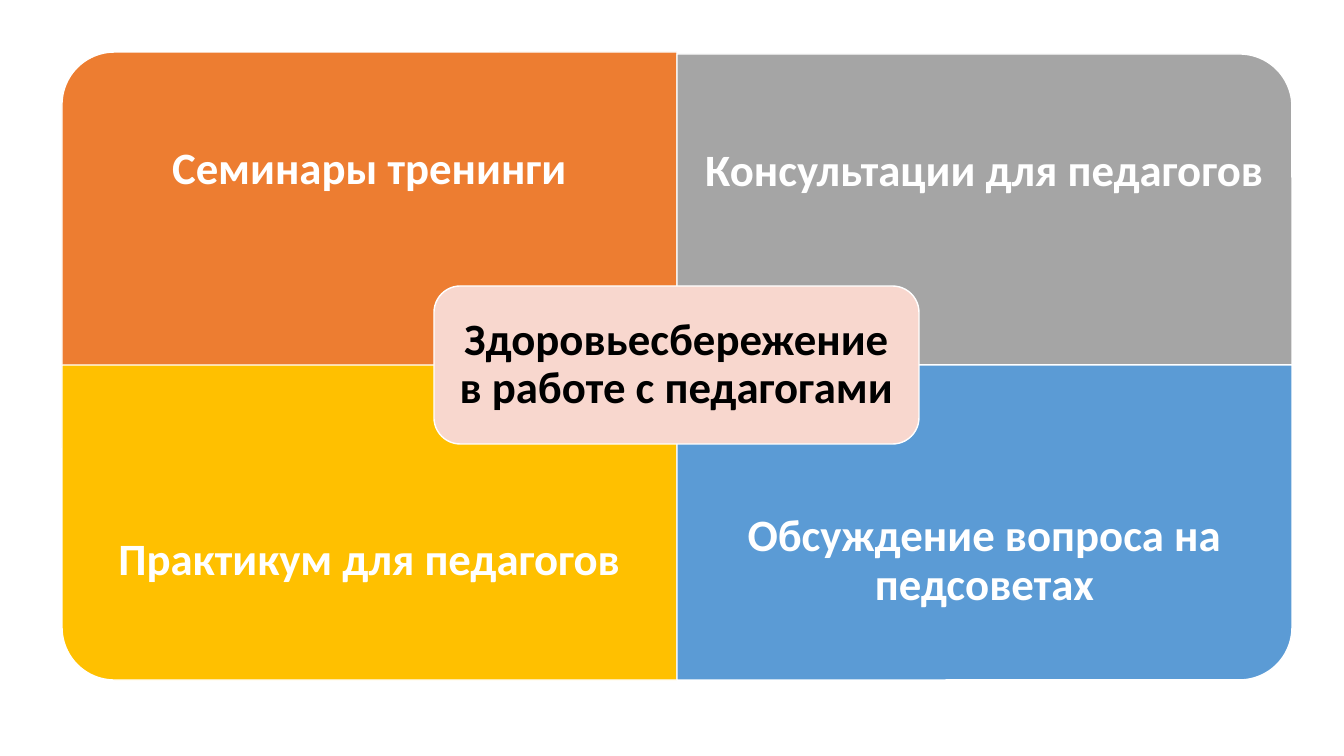
"""Build a slide with four coloured quadrants around a central topic."""
import pptx
import pptx.util
from pptx.dml.color import RGBColor
from pptx.enum.shapes import MSO_SHAPE
from pptx.enum.text import MSO_ANCHOR, PP_ALIGN

COLORS = {
    "orange": "ED7D31",
    "gray": "A5A5A5",
    "gold": "FFC000",
    "blue": "5B9BD5",
    "pink": "F8D7CE",
    "white": "FFFFFF",
    "black": "000000",
}
# text, fill, column, row, top, rotation
QUADRANTS = [
    ("Семинары тренинги", "orange", 0, 0, 52, 270),
    ("Консультации для педагогов", "gray", 1, 0, 54, 0),
    ("Практикум для педагогов", "gold", 0, 1, 365, 180),
    ("Обсуждение вопроса на педсоветах", "blue", 1, 1, 365, 90),
]
TOPIC = "Здоровьесбережение в работе с педагогами"
TOPIC_BOX = (434, 286, 485, 158)
LEFT, WIDTH, HEIGHT, TEXT_HEIGHT = 62, 615, 315, 237
EMU_PER_PX = 914400 / 100.8


def px(value):
    return pptx.util.Emu(round(value * EMU_PER_PX))


def add_panel(slide, preset, box, fill, rotation=0):
    left, top, width, height = box
    if rotation % 180:
        left, top = left + (width - height) / 2, top + (height - width) / 2
        width, height = height, width
    shape = slide.shapes.add_shape(preset, px(left), px(top), px(width), px(height))
    shape.rotation = rotation
    shape.shadow.inherit = False
    shape.fill.solid()
    shape.fill.fore_color.rgb = RGBColor.from_string(COLORS[fill])
    shape.line.color.rgb = RGBColor.from_string(COLORS["white"])
    shape.line.width = pptx.util.Pt(1)
    return shape


def write_text(shape, text, color, margin):
    frame = shape.text_frame
    frame.word_wrap = True
    frame.vertical_anchor = MSO_ANCHOR.MIDDLE
    frame.margin_left = frame.margin_right = px(margin)
    frame.margin_top = frame.margin_bottom = px(margin)
    paragraph = frame.paragraphs[0]
    paragraph.text = text
    paragraph.alignment = PP_ALIGN.CENTER
    paragraph.line_spacing = 0.9
    paragraph.font.name = "Calibri"
    paragraph.font.size = pptx.util.Pt(32)
    paragraph.font.bold = True
    paragraph.font.color.rgb = RGBColor.from_string(COLORS[color])


def main():
    presentation = pptx.Presentation()
    presentation.slide_width = px(1344)
    presentation.slide_height = px(756)
    slide = presentation.slides.add_slide(presentation.slide_layouts[6])

    for text, fill, column, row, top, rotation in QUADRANTS:
        left = LEFT + column * WIDTH
        add_panel(slide, MSO_SHAPE.ROUND_1_RECTANGLE, (left, top, WIDTH, HEIGHT), fill, rotation)
        text_top = top + row * (HEIGHT - TEXT_HEIGHT)
        label = slide.shapes.add_textbox(px(left), px(text_top), px(WIDTH), px(TEXT_HEIGHT))
        write_text(label, text, "white", 25)

    topic = add_panel(slide, MSO_SHAPE.ROUNDED_RECTANGLE, TOPIC_BOX, "pink")
    write_text(topic, TOPIC, "black", 13)
    presentation.save("out.pptx")


if __name__ == "__main__":
    main()
